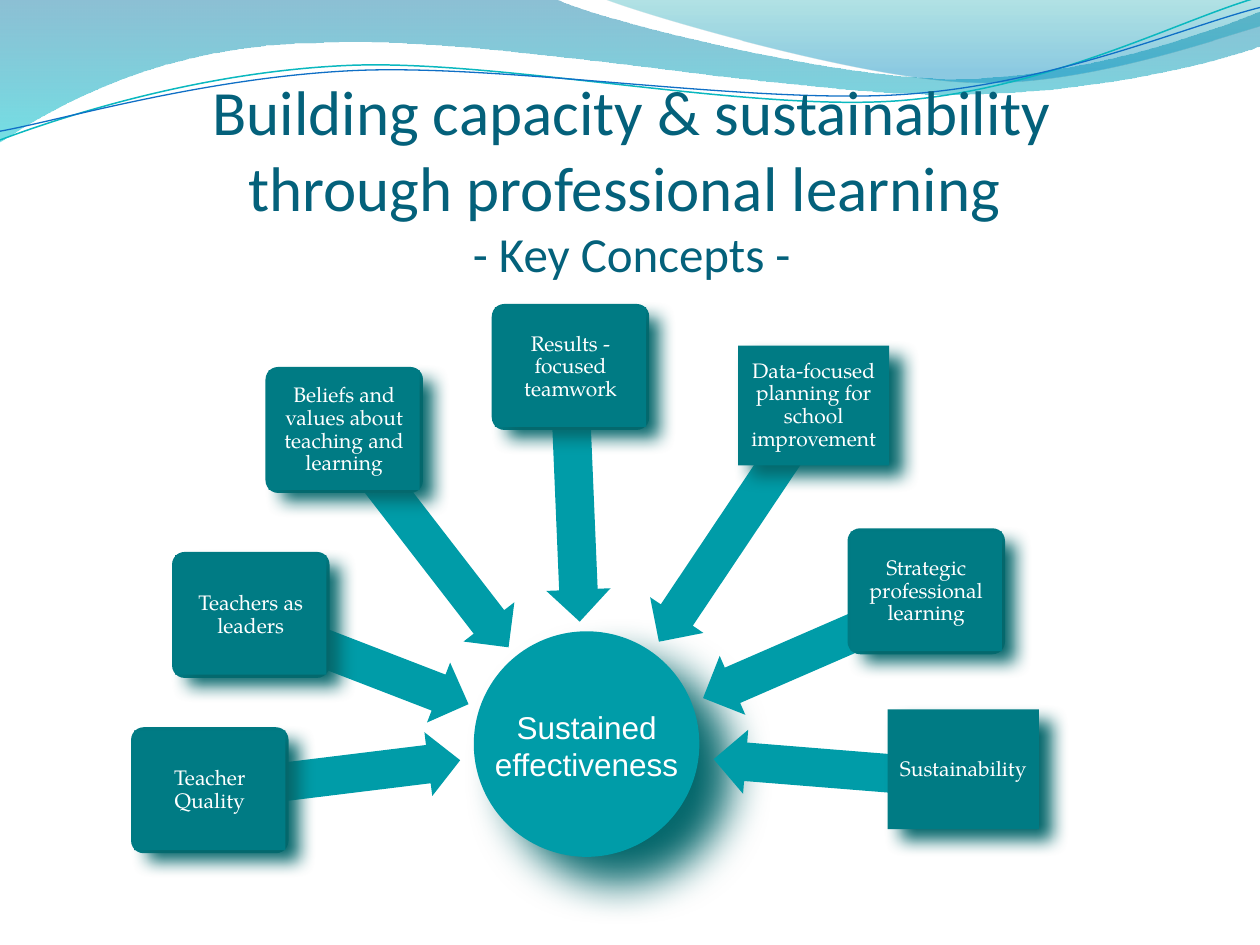
"""Build the Key Concepts slide: seven factors pointing at sustained effectiveness."""
from lxml.etree import SubElement
from pptx import Presentation
from pptx.dml.color import RGBColor
from pptx.enum.shapes import MSO_SHAPE as SHAPE
from pptx.enum.text import MSO_ANCHOR as ANCHOR, MSO_AUTO_SIZE as FIT, PP_ALIGN as ALIGN
from pptx.oxml.ns import qn
from pptx.util import Pt

COLORS = {
    "title": "04617B", "hub": "009CA8", "box": "007B84", "shadow": "06686C",
    "text": "FFFFFF", "teal": "0AB8BF", "blue": "0F6FC6",
    "wave_top": "0074A1", "wave_end": "00C6CF",
    "corner_top": "00A1A9", "corner_end": "008BBF",
}
TITLE = [("Building capacity & sustainability", 36),
         ("through professional learning ", 36),
         ("- Key Concepts -", 28)]
HUB = "Sustained effectiveness"
HUB_CENTER, HUB_SIZE = (335.2, 425.2), (128.9, 128.9)
FACTORS = [
    ("Teacher Quality", (119.9, 451.6), True, (191.5, 443.2), 144, 173),
    ("Teachers as leaders", (143.3, 351.4), True, (205.6, 378.4), 133.2, 201.1),
    ("Beliefs and values about teaching and learning", (196.7, 245.7), True,
     (243.7, 309.2), 153.4, 232.3),
    ("Results - focused teamwork", (326, 209.7), True, (328.3, 284), 142.6, 267.6),
    ("Data-focused planning for school improvement", (465, 231.7), False,
     (420.8, 300.6), 159.1, 303.8),
    ("Strategic professional learning", (529.3, 337.9), True, (465.5, 371.2), 139, 336.5),
    ("Sustainability", (550.5, 439.6), False, (479.2, 439.6), 143.3, 4.6),
]
FRAME, LABEL = (90, 72), (86.4, 68.4)
ARROW_HEIGHT = 36.7

WAVES = [
    ([[(0, -0.7)], [(317, -0.7)], [(343, 12), (478, 45), (546, 45)],
      [(614, 45), (690, 19), (720, 6.5)], [(720.7, 26)],
      [(708, 32), (626, 55), (537, 54)], [(448, 54), (275, 20), (185, 24.5)],
      [(93, 25), (33, 60), (-0.7, 81.4)], [(0, -0.7)]],
     [("wave_top", 0, 45), ("wave_end", 1, 55)]),
    ([[(345, -0.7)], [(366, 8), (491, 45), (554, 47)],
      [(616, 50), (692, 23), (720, 15)], [(720, 0)], [(345, -0.7)]],
     [("corner_top", 0, 30), ("corner_end", 0.8, 45)]),
]
CURVES = [
    ([[(0, 80)], [(34.6, 67), (113.8, 41), (199.4, 37.4)],
      [(284.4, 33.8), (427, 64), (513.4, 57.6)], [(599.8, 51), (675.4, 10.8), (718.6, -1.4)]],
     "teal", 0.85),
    ([[(0, 75)], [(33.8, 69), (118, 44), (203.8, 40.3)],
      [(290.2, 36.7), (430, 59.8), (516.2, 54)], [(602, 48.2), (677.5, 15), (720, 4.3)]],
     "blue", 0.75),
]


def rgb(name):
    return RGBColor.from_string(COLORS[name])


def add_outline(shapes, segments, close):
    pts = [(Pt(x), Pt(y)) for seg in segments for x, y in seg]
    builder = shapes.build_freeform(*pts[0], scale=1.0)
    builder.add_line_segments(pts[1:], close=close)
    s = builder.convert_to_shape()
    s.shadow.inherit = False
    lines = iter(list(s.element.iter(qn("a:lnTo"))))
    for seg in segments[1:]:
        nodes = [next(lines) for _ in seg]
        if len(nodes) == 3:
            curve = SubElement(nodes[0].getparent(), qn("a:cubicBezTo"))
            nodes[0].addprevious(curve)
            for node in nodes:
                curve.append(node[0])
                node.getparent().remove(node)
    return s


def add_wave(shapes, segments, stops):
    s = add_outline(shapes, segments, True)
    s.line.fill.background()
    s.fill.gradient()
    s.fill.gradient_angle = 270
    for stop, (color, position, opacity) in zip(s.fill.gradient_stops, stops):
        stop.color.rgb = rgb(color)
        stop.position = position
    for clr, (_, _, opacity) in zip(s.element.spPr.iter(qn("a:srgbClr")), stops):
        SubElement(clr, qn("a:alpha"), val=str(opacity * 1000))


def add_curve(shapes, segments, color, width):
    s = add_outline(shapes, segments, False)
    s.fill.background()
    s.line.color.rgb = rgb(color)
    s.line.width = Pt(width)


def add_centered(shapes, kind, center, size, color, adjustments=()):
    (x, y), (w, h) = center, size
    s = shapes.add_shape(kind, Pt(x - w / 2), Pt(y - h / 2), Pt(w), Pt(h))
    s.shadow.inherit = False
    s.fill.solid()
    s.fill.fore_color.rgb = rgb(color)
    s.line.fill.background()
    for i, value in enumerate(adjustments):
        s.adjustments[i] = value
    return s


def add_shadow(s, size):
    effects = s.element.spPr.find(qn("a:effectLst"))
    shadow = SubElement(effects, qn("a:outerShdw"), blurRad=str(Pt(size)), dist=str(Pt(size)),
                        dir=str(40 * 60000), algn="tl", rotWithShape="0")
    SubElement(shadow, qn("a:srgbClr"), val=COLORS["shadow"])


def add_run(p, text, font, size, color):
    p.alignment = ALIGN.CENTER
    r = p.add_run()
    r.text = text
    r.font.name = font
    r.font.size = Pt(size)
    r.font.color.rgb = rgb(color)


def add_factor(shapes, text, center, framed, arrow_center, length, rotation):
    arrow = add_centered(shapes, SHAPE.LEFT_ARROW, arrow_center, (length, ARROW_HEIGHT),
                         "hub", (0.6, 0.5))
    arrow.rotation = rotation
    if framed:
        add_centered(shapes, SHAPE.ROUNDED_RECTANGLE, center, FRAME, "box", (0.1,))
    s = add_centered(shapes, SHAPE.RECTANGLE, center, LABEL, "box")
    add_shadow(s, 10)
    tf = s.text_frame
    tf.word_wrap = True
    tf.vertical_anchor = ANCHOR.MIDDLE
    tf.margin_left = tf.margin_right = tf.margin_top = tf.margin_bottom = Pt(2.4)
    p = tf.paragraphs[0]
    p.line_spacing = 0.9
    add_run(p, text, "TeX Gyre Pagella", 12, "text")


def add_title(s):
    s.element.getparent().append(s.element)
    s.left, s.top, s.width, s.height = Pt(37), Pt(71.5), Pt(648), Pt(90)
    tf = s.text_frame
    tf.auto_size = FIT.NONE
    tf.word_wrap = True
    tf.vertical_anchor = ANCHOR.BOTTOM
    tf.margin_left = tf.margin_right = tf.margin_bottom = 0
    p = tf.paragraphs[0]
    for i, (text, size) in enumerate(TITLE):
        if i:
            p.add_line_break()
        add_run(p, text, "Calibri", size, "title")


def main():
    prs = Presentation()
    prs.slide_width, prs.slide_height = Pt(720), Pt(540)
    shapes = prs.slides.add_slide(prs.slide_layouts[5]).shapes
    for wave in WAVES:
        add_wave(shapes, *wave)
    for curve in CURVES:
        add_curve(shapes, *curve)
    add_title(shapes.title)
    hub = add_centered(shapes, SHAPE.OVAL, HUB_CENTER, HUB_SIZE, "hub")
    add_shadow(hub, 24)
    for factor in FACTORS:
        add_factor(shapes, *factor)
    tf = shapes.add_textbox(Pt(275.2), Pt(400.8), Pt(120), Pt(51)).text_frame
    tf.word_wrap = True
    tf.auto_size = FIT.SHAPE_TO_FIT_TEXT
    add_run(tf.paragraphs[0], HUB, "Arial", 18, "text")
    prs.save("out.pptx")


if __name__ == "__main__":
    main()
